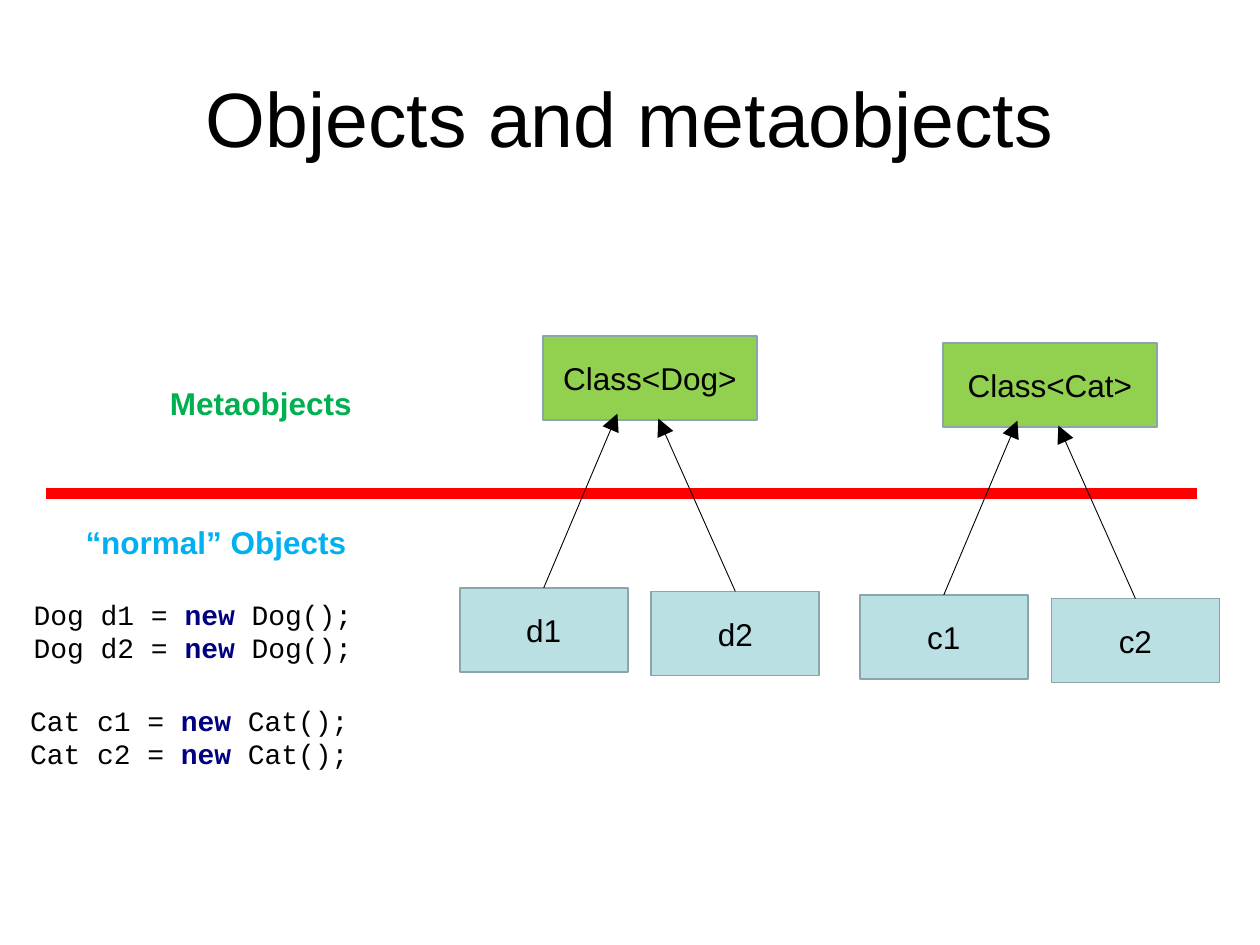
from lxml import etree
from pptx import Presentation
from pptx.dml.color import RGBColor
from pptx.enum.shapes import MSO_CONNECTOR, MSO_SHAPE
from pptx.enum.text import MSO_ANCHOR, PP_ALIGN
from pptx.oxml.ns import qn
from pptx.util import Pt

COLORS = {
    "text": "000000", "keyword": "000080", "paper": "FFFFFF",
    "class": "92D050", "instance": "BBE0E3", "border": "8AA6A8",
    "divider": "FF0000", "meta": "00B050", "normal": "00B0F0",
}
TITLE = "Objects and metaobjects"
# text, color, left, top, width
LABELS = [
    ("Metaobjects", "meta", 90, 216, 160),
    ("“normal” Objects", "normal", 41.8, 295.2, 186),
]
# class name, variable names, left and top of the class box, left and top of the code
FAMILIES = [
    ("Dog", ("d1", "d2"), (310.2, 192), (12.2, 337.5)),
    ("Cat", ("c1", "c2"), (538.8, 196), (10.1, 398)),
]
CLASS_SIZE = (122.4, 48)
INSTANCE_SIZE = (96, 48)
CODE_SIZE = (204, 46)
# Offsets from the class box: instance box, then arrow tip
INSTANCE_OFFSETS = [((-47.5, 144), (42.6, 44.4)), ((62, 146), (66, 47.2))]
DIVIDER = ((26.4, 282), (684, 282))


def color(name):
    return RGBColor.from_string(COLORS[name])


def style_font(font, size, name="Arial", color_name="text", bold=False):
    font.size, font.name, font.bold = Pt(size), name, bold
    font.color.rgb = color(color_name)


def add_box(slide, position, size, fill, border=None):
    shape = slide.shapes.add_shape(
        MSO_SHAPE.RECTANGLE, *(Pt(value) for value in (*position, *size)))
    shape.shadow.inherit = False
    shape.fill.solid()
    shape.fill.fore_color.rgb = color(fill)
    if border:
        shape.line.color.rgb = color(border)
        shape.line.width = Pt(1)
    else:
        shape.line.fill.background()
    shape.text_frame.vertical_anchor = MSO_ANCHOR.MIDDLE
    return shape


def add_object_box(slide, text, position, size, fill):
    paragraph = add_box(slide, position, size, fill, "border").text_frame.paragraphs[0]
    paragraph.text = text
    paragraph.alignment = PP_ALIGN.CENTER
    style_font(paragraph.font, 18)


def add_code(slide, class_name, variables, position):
    frame = add_box(slide, position, CODE_SIZE, "paper").text_frame
    frame.word_wrap = True
    paragraph = frame.paragraphs[0]
    paragraph.alignment = PP_ALIGN.LEFT
    for index, variable in enumerate(variables):
        if index:
            paragraph.add_line_break()
        for text, is_keyword in ((f"{class_name} {variable} = ", False),
                                 ("new ", True), (f"{class_name}();", False)):
            run = paragraph.add_run()
            run.text = text
            style_font(run.font, 16, "Courier New",
                       "keyword" if is_keyword else "text", is_keyword)


def add_line(slide, start, end, color_name, width, arrow=False):
    connector = slide.shapes.add_connector(
        MSO_CONNECTOR.STRAIGHT, *(Pt(value) for value in (*start, *end)))
    connector.line.color.rgb = color(color_name)
    connector.line.width = Pt(width)
    properties = connector._element.spPr
    if arrow:
        etree.SubElement(properties.find(qn("a:ln")), qn("a:tailEnd"),
                         type="triangle", w="lg", len="lg")
    etree.SubElement(properties, qn("a:effectLst"))


def add_label(slide, text, color_name, left, top, width):
    frame = slide.shapes.add_textbox(Pt(left), Pt(top), Pt(width), Pt(29)).text_frame
    frame.word_wrap = True
    paragraph = frame.paragraphs[0]
    paragraph.text = text
    style_font(paragraph.font, 18, color_name=color_name, bold=True)


def add_family(slide, class_name, variables, origin, code_position):
    """Draw a class box, its instances with arrows to it, and their code."""
    def place(offset):
        return origin[0] + offset[0], origin[1] + offset[1]

    add_object_box(slide, f"Class<{class_name}>", origin, CLASS_SIZE, "class")
    for variable, (box_offset, tip_offset) in zip(variables, INSTANCE_OFFSETS):
        left, top = place(box_offset)
        add_object_box(slide, variable, (left, top), INSTANCE_SIZE, "instance")
        add_line(slide, (left + INSTANCE_SIZE[0] / 2, top), place(tip_offset),
                 "text", 0.5, arrow=True)
    add_code(slide, class_name, variables, code_position)


def main():
    presentation = Presentation()
    presentation.slide_width, presentation.slide_height = Pt(720), Pt(540)
    slide = presentation.slides.add_slide(presentation.slide_layouts[5])

    title = slide.shapes.title
    title.left, title.top, title.width, title.height = Pt(36), Pt(21.6), Pt(648), Pt(90)
    title.text_frame.vertical_anchor = MSO_ANCHOR.MIDDLE
    paragraph = title.text_frame.paragraphs[0]
    paragraph.text = TITLE
    paragraph.alignment = PP_ALIGN.CENTER
    style_font(paragraph.font, 44)

    add_line(slide, *DIVIDER, "divider", 6.25)
    for label in LABELS:
        add_label(slide, *label)
    for family in FAMILIES:
        add_family(slide, *family)
    presentation.save("out.pptx")


if __name__ == "__main__":
    main()
